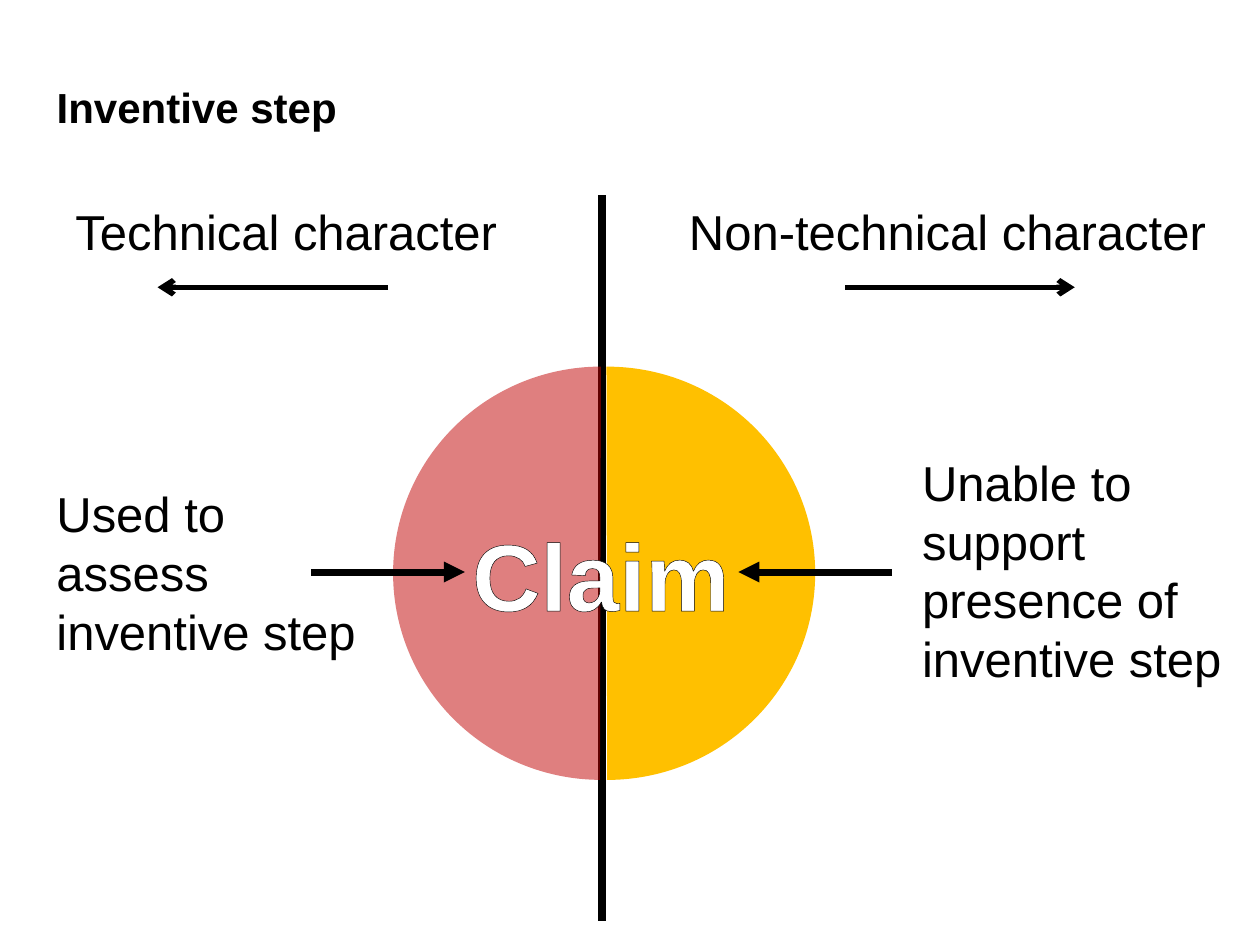
from dataclasses import dataclass
from typing import Optional

import pptx
import pptx.dml.color
import pptx.enum.shapes
import pptx.enum.text
import pptx.oxml
import pptx.oxml.ns
import pptx.util
from pptx.util import Inches

BLACK = pptx.dml.color.RGBColor(0x00, 0x00, 0x00)
WHITE = pptx.dml.color.RGBColor(0xFF, 0xFF, 0xFF)
AMBER = pptx.dml.color.RGBColor(0xFF, 0xC0, 0x00)
RED = pptx.dml.color.RGBColor(0xC0, 0x00, 0x00)

FONT = "Arial"
CHORD_TOP, CHORD_WIDTH, CHORD_HEIGHT = 2.91, 3.3, 3.28
DIRECTION_Y, CLAIM_ARROW_Y = 2.28, 4.54
NAMESPACE = pptx.oxml.ns.nsdecls("a")


@dataclass
class Label:
    text: str
    left: float
    top: float
    width: float
    height: float
    wrap: bool = True


@dataclass
class Line:
    start: tuple[float, float]
    end: tuple[float, float]
    weight: float
    arrowhead: Optional[str] = None


@dataclass
class HalfCircle:
    left: float
    angles: tuple[float, float]
    color: pptx.dml.color.RGBColor
    opacity: int = 100


DIVIDER = Line((4.78, 1.55), (4.78, 7.31), 4.5)
NON_TECHNICAL_HALF = HalfCircle(3.17, (161.87, 54.02), AMBER)
TECHNICAL_HALF = HalfCircle(3.12, (54.17, 162), RED, 50)
ARROWS = [
    Line((3.08, DIRECTION_Y), (1.25, DIRECTION_Y), 3, "arrow"),
    Line((6.71, DIRECTION_Y), (8.53, DIRECTION_Y), 3, "arrow"),
    Line((2.47, CLAIM_ARROW_Y), (3.69, CLAIM_ARROW_Y), 4, "triangle"),
    Line((7.08, CLAIM_ARROW_Y), (5.86, CLAIM_ARROW_Y), 4, "triangle"),
]
LABELS = [
    Label("Technical character", 0.5, 1.55, 3.59, 0.57, wrap=False),
    Label("Non-technical character", 5.37, 1.55, 4.36, 0.57, wrap=False),
    Label("Used to assess inventive step", 0.35, 3.79, 2.63, 1.51),
    Label("Unable to support presence of inventive step", 7.22, 3.54, 2.63, 1.99),
]


def write_text(shape, text: str, size: float, color=BLACK, bold=False,
               alignment=pptx.enum.text.PP_ALIGN.LEFT):
    """Write one formatted paragraph and return its run."""
    paragraph = shape.text_frame.paragraphs[0]
    paragraph.alignment = alignment
    run = paragraph.add_run()
    run.text = text
    font_format = {"name": FONT, "size": pptx.util.Pt(size), "bold": bold}
    for attribute, value in font_format.items():
        setattr(run.font, attribute, value)
    run.font.color.rgb = color
    return run


def add_title(slide, text: str) -> None:
    title = slide.shapes.title
    position = {"left": 0.35, "top": 0.6, "width": 3.15, "height": 0.5}
    for attribute, value in position.items():
        setattr(title, attribute, Inches(value))
    frame_format = {
        "word_wrap": True,
        "vertical_anchor": pptx.enum.text.MSO_ANCHOR.TOP,
        "auto_size": pptx.enum.text.MSO_AUTO_SIZE.SHAPE_TO_FIT_TEXT,
    }
    for attribute, value in frame_format.items():
        setattr(title.text_frame, attribute, value)
    write_text(title, text, 24, bold=True)


def add_label(slide, label: Label) -> None:
    box = slide.shapes.add_textbox(Inches(label.left), Inches(label.top),
                                   Inches(label.width), Inches(label.height))
    box.text_frame.word_wrap = label.wrap
    box.text_frame.auto_size = pptx.enum.text.MSO_AUTO_SIZE.SHAPE_TO_FIT_TEXT
    write_text(box, label.text, 28)


def add_line(slide, line: Line) -> None:
    connector = slide.shapes.add_connector(
        pptx.enum.shapes.MSO_CONNECTOR.STRAIGHT,
        *map(Inches, line.start), *map(Inches, line.end))
    connector.line.color.rgb = BLACK
    connector.line.width = pptx.util.Pt(line.weight)
    if line.arrowhead:
        connector.line._get_or_add_ln().append(pptx.oxml.parse_xml(
            f'<a:tailEnd {NAMESPACE} type="{line.arrowhead}"/>'))
    connector._element.spPr.append(
        pptx.oxml.parse_xml(f"<a:effectLst {NAMESPACE}/>"))


def add_half_circle(slide, half: HalfCircle):
    shape = slide.shapes.add_shape(
        pptx.enum.shapes.MSO_SHAPE.CHORD, Inches(half.left), Inches(CHORD_TOP),
        Inches(CHORD_WIDTH), Inches(CHORD_HEIGHT))
    for index, angle in enumerate(half.angles):
        shape.adjustments[index] = angle
    shape.shadow.inherit = False
    shape.fill.solid()
    shape.fill.fore_color.rgb = half.color
    shape.line.fill.background()
    if half.opacity < 100:
        color = shape._element.spPr.find(".//" + pptx.oxml.ns.qn("a:srgbClr"))
        color.append(pptx.oxml.parse_xml(
            f'<a:alpha {NAMESPACE} val="{half.opacity * 1000}"/>'))
    return shape


def add_claim(shape) -> None:
    """Write the white, black-outlined word in the middle of the circle."""
    shape.text_frame.vertical_anchor = pptx.enum.text.MSO_ANCHOR.MIDDLE
    run = write_text(shape, "Claim", 54, WHITE, True,
                     pptx.enum.text.PP_ALIGN.CENTER)
    run.font._element.insert(0, pptx.oxml.parse_xml(
        f'<a:ln {NAMESPACE} w="{pptx.util.Pt(0.75)}"><a:solidFill>'
        f'<a:srgbClr val="{BLACK}"/></a:solidFill></a:ln>'))


def main() -> None:
    presentation = pptx.Presentation()
    presentation.slide_width = Inches(10)
    presentation.slide_height = Inches(7.5)
    title_only = presentation.slide_layouts[5]
    slide = presentation.slides.add_slide(title_only)

    add_title(slide, "Inventive step")
    add_half_circle(slide, NON_TECHNICAL_HALF)
    add_line(slide, DIVIDER)
    add_claim(add_half_circle(slide, TECHNICAL_HALF))
    for label in LABELS:
        add_label(slide, label)
    for arrow in ARROWS:
        add_line(slide, arrow)
    presentation.save("out.pptx")


if __name__ == "__main__":
    main()
